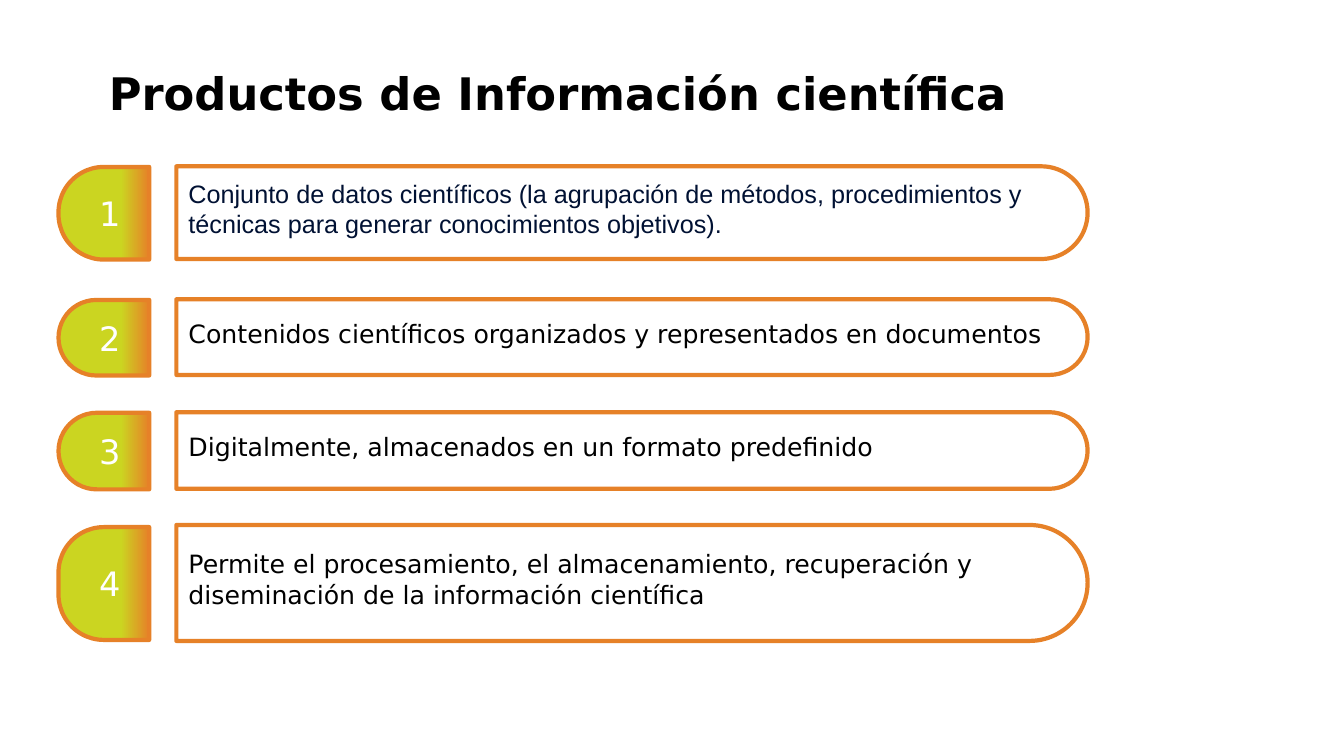
"""Build the slide on scientific information products."""
from copy import deepcopy

from pptx import Presentation
from pptx.dml.color import RGBColor
from pptx.enum.shapes import MSO_SHAPE
from pptx.enum.text import MSO_ANCHOR, PP_ALIGN
from pptx.oxml.ns import qn
from pptx.util import Pt

LIME = RGBColor(0xCB, 0xD5, 0x21)
ORANGE = RGBColor(0xE6, 0x81, 0x28)
WHITE = RGBColor(0xFF, 0xFF, 0xFF)
BLACK = RGBColor(0x00, 0x00, 0x00)
NAVY = RGBColor(0x00, 0x11, 0x33)

SANS = "DejaVu Sans"
TAB_CENTER, TAB_LENGTH = 74.2, 64.8
BAR_CENTER, BAR_LENGTH = 451.4, 650.9

ROWS = [
    ("Conjunto de datos científicos (la agrupación de métodos, procedimientos y "
     "técnicas para generar conocimientos objetivos).",
     151.9, 66.2, 66.2, 47, "Arial", NAVY, PP_ALIGN.LEFT),
    ("Contenidos científicos organizados y representados en documentos",
     240.8, 54, 54, 38.2, SANS, BLACK, PP_ALIGN.JUSTIFY),
    ("Digitalmente, almacenados en un formato predefinido",
     321.8, 54.7, 54.7, 38.2, SANS, BLACK, PP_ALIGN.JUSTIFY),
    ("Permite el procesamiento, el almacenamiento, recuperación y "
     "diseminación de la información científica",
     416.4, 80.6, 82.8, 58.3, SANS, BLACK, PP_ALIGN.LEFT),
]

deck = Presentation()
deck.slide_width, deck.slide_height = Pt(960), Pt(540)
page = deck.slides.add_slide(deck.slide_layouts[6])


def add_rounded(center_x, center_y, thickness, length, rotation):
    shape = page.shapes.add_shape(
        MSO_SHAPE.ROUND_2_SAME_RECTANGLE,
        Pt(center_x - thickness / 2), Pt(center_y - length / 2),
        Pt(thickness), Pt(length))
    shape.rotation = rotation
    shape.adjustments[0] = 0.5
    shape.adjustments[1] = 0
    shape.shadow.inherit = False
    shape.line.color.rgb = ORANGE
    shape.line.width = Pt(3)
    return shape


def add_text(text, left, top, width, height, size, color, font=SANS,
             align=PP_ALIGN.LEFT, anchor=MSO_ANCHOR.MIDDLE, insets=(7.2, 3.6, 3.6)):
    box = page.shapes.add_textbox(Pt(left), Pt(top), Pt(width), Pt(height))
    frame = box.text_frame
    frame.word_wrap = True
    frame.vertical_anchor = anchor
    side, above, below = insets
    frame.margin_left = frame.margin_right = Pt(side)
    frame.margin_top, frame.margin_bottom = Pt(above), Pt(below)
    frame.text = text
    para = frame.paragraphs[0]
    para.alignment = align
    span = para.runs[0]
    span.font.name, span.font.size = font, Pt(size)
    span.font.color.rgb = color
    return span


title = add_text("Productos de Información científica", 70.6, 43.2, 749.5, 46.1,
                 32, BLACK, anchor=MSO_ANCHOR.TOP)
title.font.bold = True

for number, row in enumerate(ROWS, start=1):
    text, middle, tab_height, bar_height, text_height, font, color, align = row

    tab = add_rounded(TAB_CENTER, middle + 0.4, tab_height, TAB_LENGTH, 270)
    tab.fill.gradient()
    tab.fill.gradient_angle = 270
    first, last = tab.fill.gradient_stops
    first.color.rgb, last.color.rgb = LIME, ORANGE
    first.position, last.position = 0, 1
    stops = tab.element.spPr.find(qn("a:gradFill")).find(qn("a:gsLst"))
    hold = deepcopy(stops[0])
    hold.set("pos", "69000")
    stops.insert(1, hold)

    bar = add_rounded(BAR_CENTER, middle, bar_height, BAR_LENGTH, 90)
    bar.fill.solid()
    bar.fill.fore_color.rgb = WHITE

    top = middle - text_height / 2
    add_text(str(number), 50.4, top + 0.4, 56.2, text_height, 24, WHITE,
             align=PP_ALIGN.CENTER)
    add_text(text, 126, top, 642, text_height, 18, color, font, align,
             insets=(8.64, 8.64, 14.4))

deck.save("out.pptx")
